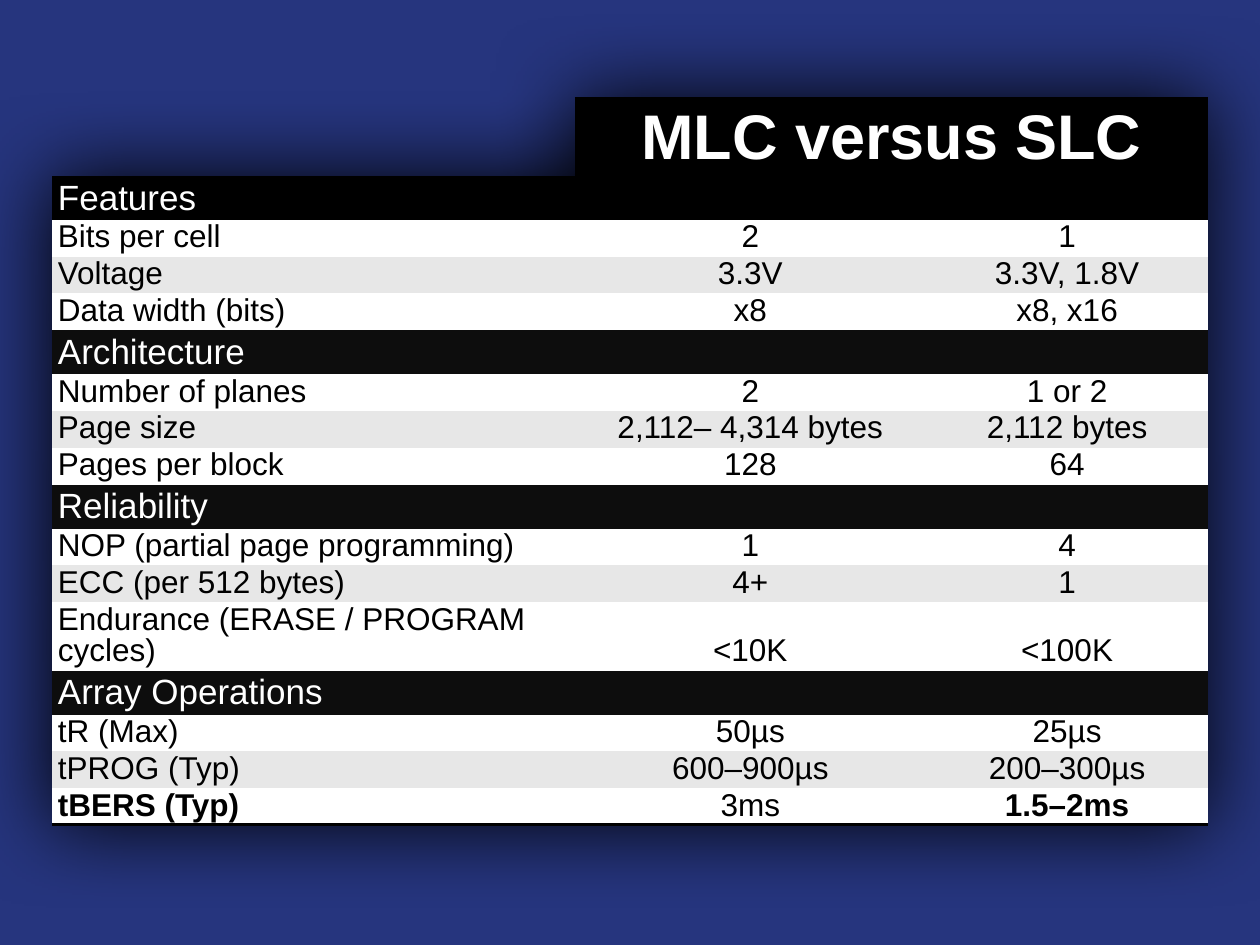
from dataclasses import dataclass
from pptx import Presentation
from pptx.dml.color import RGBColor as RGB
from pptx.enum.text import MSO_ANCHOR as Anchor, PP_ALIGN as Align
from pptx.oxml import parse_xml
from pptx.oxml.ns import nsdecls, qn
from pptx.util import Pt

PLAIN = "{2D5ABB26-0587-4C30-8999-92F81FD0307C}"  # no style, no grid


@dataclass(frozen=True)
class Theme:
    font: str = "Arial"
    back: str = "26357E"
    black: str = "000000"
    dark: str = "0D0D0D"
    white: str = "FFFFFF"
    gray: str = "E7E7E7"
    title: int = 36
    head: int = 20
    body: int = 18


TITLE = "MLC versus SLC"
GROUPS = {
    "Features": [
        ("Bits per cell", "2", "1"),
        ("Voltage", "3.3V", "3.3V, 1.8V"),
        ("Data width (bits)", "x8", "x8, x16"),
    ],
    "Architecture": [
        ("Number of planes", "2", "1 or 2"),
        ("Page size", "2,112– 4,314 bytes", "2,112 bytes"),
        ("Pages per block", "128", "64"),
    ],
    "Reliability": [
        ("NOP (partial page programming)", "1", "4"),
        ("ECC (per 512 bytes)", "4+", "1"),
        ("Endurance (ERASE / PROGRAM cycles)", "<10K", "<100K"),
    ],
    "Array Operations": [
        ("tR (Max)", "50µs", "25µs"),
        ("tPROG (Typ)", "600–900µs", "200–300µs"),
        ("tBERS (Typ)", "3ms", "1.5–2ms"),
    ],
}
BOLD = {"tBERS (Typ)", "1.5–2ms"}
WIDTHS = (299, 200.5, 161.5)
HIGH = {"title": 44, "head": 25, "body": 20, "tall": 38}


class Deck:
    def __init__(self, theme):
        self.theme = theme
        self.prs = Presentation()
        self.prs.slide_width, self.prs.slide_height = Pt(720), Pt(540)
        self.slide = self.prs.slides.add_slide(self.prs.slide_layouts[6])
        fill = self.slide.background.fill
        fill.solid()
        fill.fore_color.rgb = RGB.from_string(theme.back)

    def table(self, left, top, widths, highs):
        frame = self.slide.shapes.add_table(
            len(highs), len(widths), Pt(left), Pt(top), Pt(sum(widths)), Pt(sum(highs)))
        table = frame.table
        table.first_row = table.horz_banding = False
        for col, width in zip(table.columns, widths):
            col.width = Pt(width)
        for row, high in zip(table.rows, highs):
            row.height = Pt(high)
        props = table._tbl.tblPr
        props.find(qn("a:tableStyleId")).text = PLAIN
        props.insert(0, parse_xml(
            f'<a:effectLst {nsdecls("a")}><a:outerShdw blurRad="{Pt(50)}" dist="0" '
            f'algn="ctr" rotWithShape="0"><a:srgbClr val="{self.theme.black}"/>'
            '</a:outerShdw></a:effectLst>'))
        return table

    def edge(self, cell, *sides):
        """Draw a black line on each side given as T or B."""
        for side in sides:
            cell._tc.get_or_add_tcPr().append(parse_xml(
                f'<a:ln{side} {nsdecls("a")} w="{Pt(2)}"><a:solidFill>'
                f'<a:srgbClr val="{self.theme.black}"/></a:solidFill></a:ln{side}>'))

    def cell(self, cell, text, fill, color, size, mid=False, bold=False, tight=False):
        cell.margin_left = cell.margin_right = Pt(3.6)
        cell.margin_top = cell.margin_bottom = Pt(1.44)
        cell.vertical_anchor = Anchor.BOTTOM
        cell.fill.solid()
        cell.fill.fore_color.rgb = RGB.from_string(fill)
        cell.text = text
        para = cell.text_frame.paragraphs[0]
        para.alignment = Align.CENTER if mid else Align.LEFT
        if tight:
            para.line_spacing = 0.9
        font = para.font
        font.name, font.size, font.bold = self.theme.font, Pt(size), bold
        font.color.rgb = RGB.from_string(color)


def main():
    theme = Theme()
    deck = Deck(theme)
    highs = [HIGH["title"]]
    for rows in GROUPS.values():
        highs.append(HIGH["head"])
        highs += [HIGH["tall" if row[0].startswith("Endurance") else "body"] for row in rows]
    table = deck.table(29.5, 56.5, WIDTHS, highs)

    table.cell(0, 0).fill.background()
    top = table.cell(0, 1)
    top.merge(table.cell(0, 2))
    for col in (1, 2):
        deck.edge(table.cell(0, col), "T", "B")
    deck.cell(top, TITLE, theme.black, theme.white, theme.title, mid=True, bold=True)

    last = len(highs) - 1
    line = 1
    for name, rows in GROUPS.items():
        fill = theme.black if line == 1 else theme.dark
        for col, text in enumerate((name, "", "")):
            deck.cell(table.cell(line, col), text, fill, theme.white, theme.head)
        for step, row in enumerate(rows):
            line += 1
            fill = theme.gray if step % 2 else theme.white
            for col, text in enumerate(row):
                cell = table.cell(line, col)
                if line == last:
                    deck.edge(cell, "B")
                deck.cell(cell, text, fill, theme.black, theme.body,
                          mid=col > 0, bold=text in BOLD, tight=True)
        line += 1
    deck.prs.save("out.pptx")


if __name__ == "__main__":
    main()
